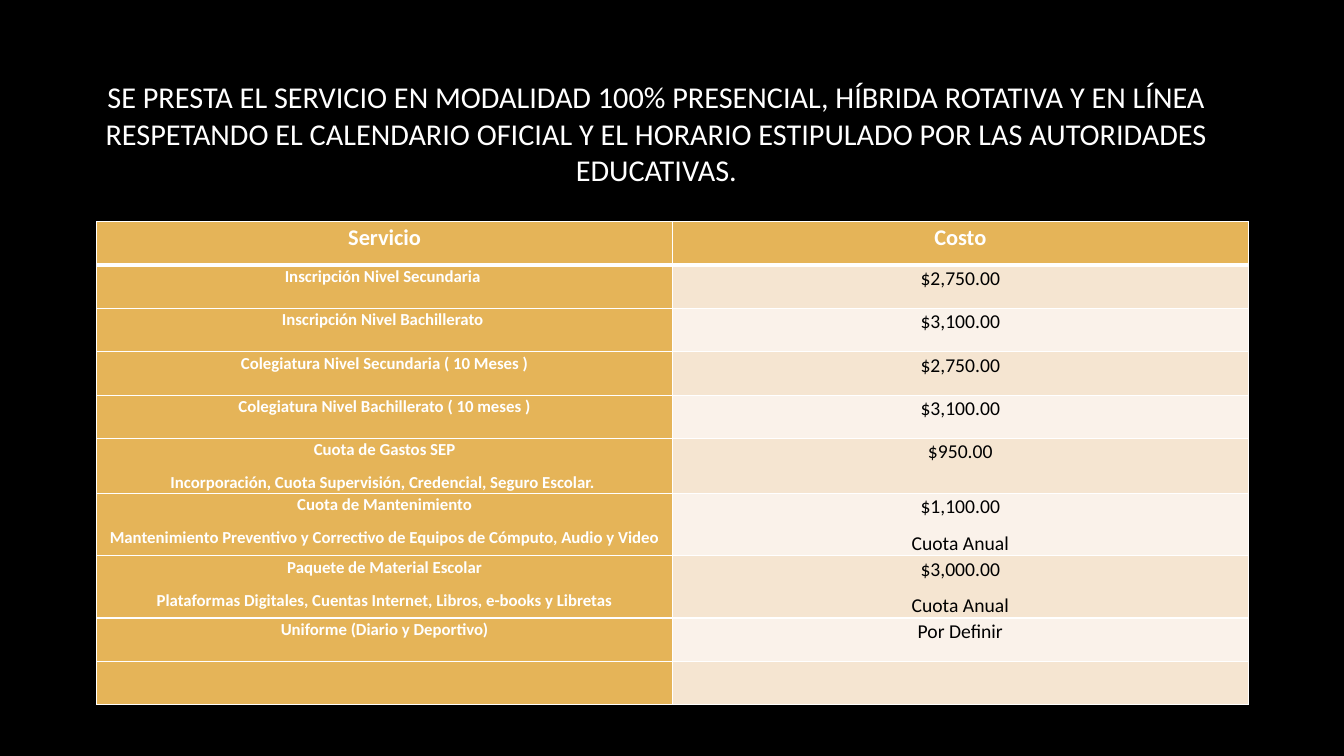
from dataclasses import dataclass

from lxml.etree import SubElement
from pptx import Presentation
from pptx.dml.color import RGBColor
from pptx.enum.text import MSO_ANCHOR, MSO_AUTO_SIZE, PP_ALIGN
from pptx.oxml.ns import qn
from pptx.util import Inches, Pt


@dataclass(frozen=True)
class Theme:
    font: str = "Calibri"
    background: str = "000000"
    light: str = "FFFFFF"
    dark: str = "000000"
    accent: str = "E5B458"
    bands: tuple = ("F5E5D1", "FAF2EA")
    title_size: float = 21.6
    header_size: int = 16
    service_size: int = 12
    cost_size: int = 14
    thin: int = 1
    thick: int = 3


class SlideBuilder:
    def __init__(self, prs, theme):
        self.theme = theme
        self.slide = prs.slides.add_slide(prs.slide_layouts[5])
        fill = self.slide.background.fill
        fill.solid()
        fill.fore_color.rgb = RGBColor.from_string(theme.background)

    def format_runs(self, p, size, color, bold=False):
        p.alignment = PP_ALIGN.CENTER
        for r in p.runs:
            r.font.name = self.theme.font
            r.font.size = Pt(size)
            r.font.bold = bold
            r.font.color.rgb = RGBColor.from_string(color)

    def title(self, text, left, top, width, height):
        sp = self.slide.shapes.title
        sp.left, sp.top = Inches(left), Inches(top)
        sp.width, sp.height = Inches(width), Inches(height)
        tf = sp.text_frame
        tf.text = text
        tf.word_wrap = True
        tf.auto_size = MSO_AUTO_SIZE.NONE
        tf.vertical_anchor = MSO_ANCHOR.MIDDLE
        tf.margin_bottom = Inches(0.69)
        self.format_runs(tf.paragraphs[0], self.theme.title_size, self.theme.light)

    def borders(self, cell, top, bottom):
        tcPr = cell._tc.get_or_add_tcPr()
        widths = {"lnL": self.theme.thin, "lnR": self.theme.thin,
                  "lnT": top, "lnB": bottom}
        for side, width in widths.items():
            ln = SubElement(tcPr, qn(f"a:{side}"), w=str(Pt(width)))
            solid = SubElement(ln, qn("a:solidFill"))
            SubElement(solid, qn("a:srgbClr"), val=self.theme.light)

    def cell(self, cell, text, fill, size, color, bold):
        cell.margin_left = cell.margin_right = Inches(0.07)
        cell.margin_top = cell.margin_bottom = 0
        cell.fill.solid()
        cell.fill.fore_color.rgb = RGBColor.from_string(fill)
        cell.text_frame.text = text
        for p in cell.text_frame.paragraphs:
            p.line_spacing = 1.07
            p.space_after = Pt(8)
            self.format_runs(p, size, color, bold)

    def table(self, rows, left, top, width, row_height):
        t = self.theme
        table = self.slide.shapes.add_table(
            len(rows), len(rows[0]), Inches(left), Inches(top),
            Inches(width), Inches(row_height * len(rows))).table
        for row in table.rows:
            row.height = Inches(row_height)
        for i, texts in enumerate(rows):
            for j, text in enumerate(texts):
                cell = table.cell(i, j)
                self.borders(cell, t.thick if i == 1 else t.thin,
                             t.thick if i == 0 else t.thin)
                if i == 0:
                    style = (t.accent, t.header_size, t.light, True)
                elif j == 0:
                    style = (t.accent, t.service_size, t.light, True)
                else:
                    style = (t.bands[(i - 1) % 2], t.cost_size, t.dark, False)
                self.cell(cell, text, *style)


TITLE = ("SE PRESTA EL SERVICIO EN MODALIDAD 100% PRESENCIAL, HÍBRIDA ROTATIVA "
         "Y EN LÍNEA RESPETANDO EL CALENDARIO OFICIAL Y EL HORARIO ESTIPULADO "
         "POR LAS AUTORIDADES EDUCATIVAS.")

FEES = [
    ("Servicio", "Costo"),
    ("Inscripción Nivel Secundaria ", "$2,750.00"),
    ("Inscripción Nivel Bachillerato ", "$3,100.00"),
    ("Colegiatura Nivel Secundaria ( 10 Meses )", "$2,750.00"),
    ("Colegiatura Nivel Bachillerato ( 10 meses )", "$3,100.00"),
    ("Cuota de Gastos SEP\n"
     "Incorporación, Cuota Supervisión, Credencial, Seguro Escolar. ", "$950.00"),
    ("Cuota de Mantenimiento\n"
     "Mantenimiento Preventivo y Correctivo de Equipos de Cómputo, Audio y Video",
     "$1,100.00\nCuota Anual"),
    ("Paquete de Material Escolar\n"
     "Plataformas Digitales, Cuentas Internet, Libros, e-books y Libretas",
     "$3,000.00\nCuota Anual"),
    ("Uniforme (Diario y Deportivo)", "Por Definir"),
    ("", ""),
]


def main():
    prs = Presentation()
    prs.slide_width, prs.slide_height = Inches(13.33), Inches(7.5)
    s = SlideBuilder(prs, Theme())
    s.title(TITLE, 0.75, 0.67, 11.52, 1.94)
    s.table(FEES, 0.96, 2.2, 11.42, 0.43)
    prs.save("out.pptx")


if __name__ == "__main__":
    main()
